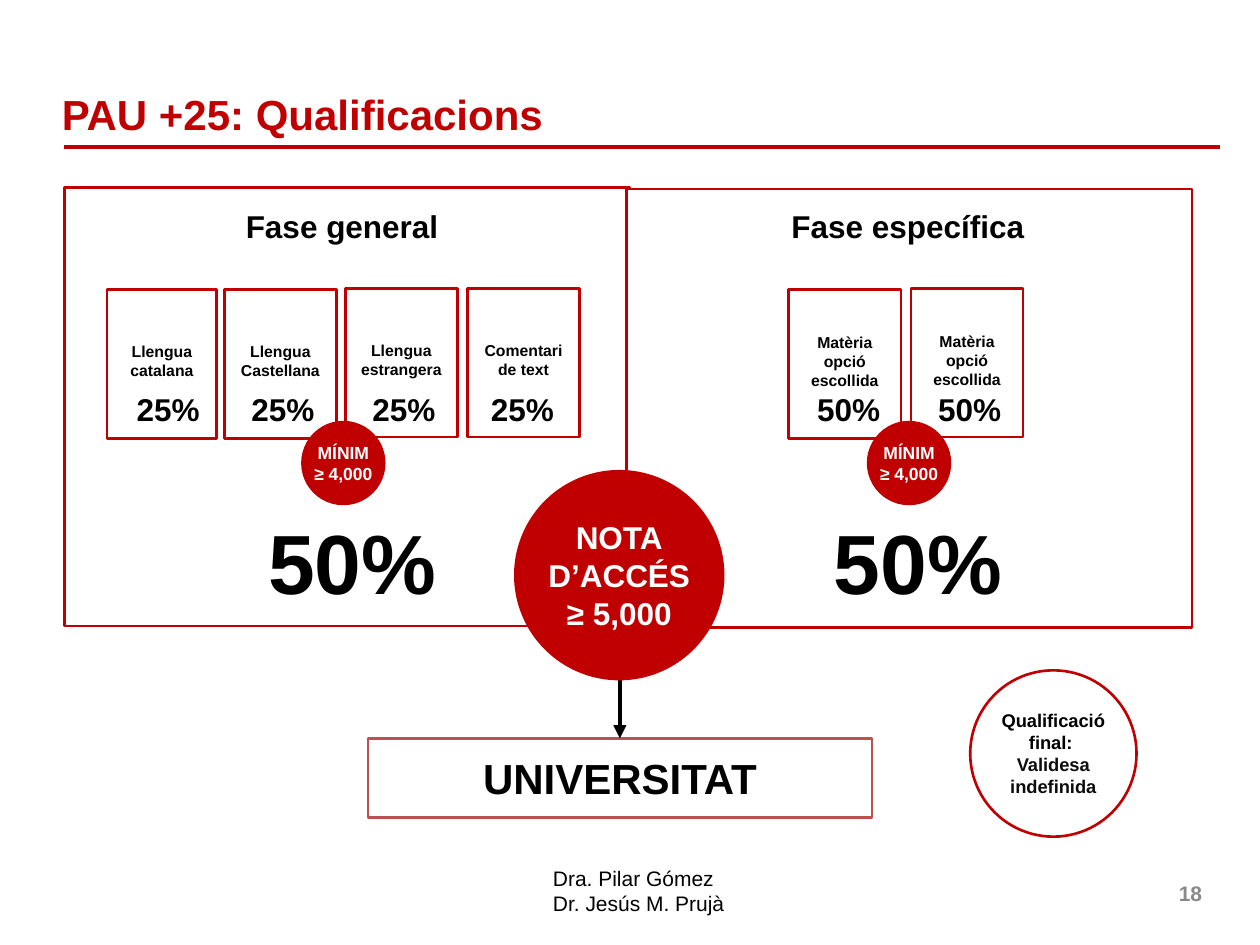
from lxml.etree import SubElement
from pptx import Presentation
from pptx.dml.color import RGBColor
from pptx.enum.shapes import MSO_CONNECTOR as Connector, MSO_SHAPE as Shape
from pptx.enum.text import MSO_ANCHOR as Anchor, PP_ALIGN as Align
from pptx.oxml.ns import qn
from pptx.util import Inches, Pt

RED, BLACK, WHITE, GREY = "C00000", "000000", "FFFFFF", "898989"
CARD_MARGINS = (0.1, 0, 0.1, 0.05)
NO_MARGINS = (0, 0, 0, 0)
TOP = 0


def color(value):
    return RGBColor.from_string(value)


def inches(values):
    return [Inches(value) for value in values]


class SlideBuilder:
    font = "Arial"

    def __init__(self, page):
        self.page = page

    def set_text(self, shape, text, size, ink=BLACK, bold=True, align=Align.CENTER,
                 anchor=Anchor.MIDDLE, margins=None, wrap=True):
        frame = shape.text_frame
        frame.text = text
        frame.word_wrap = wrap
        frame.vertical_anchor = anchor
        if margins:
            (frame.margin_left, frame.margin_top,
             frame.margin_right, frame.margin_bottom) = inches(margins)
        for paragraph in frame.paragraphs:
            paragraph.alignment = align
            for span in paragraph.runs:
                span.font.name = self.font
                span.font.size = Pt(size)
                span.font.bold = bold
                span.font.color.rgb = color(ink)

    def title(self, text, place):
        title = self.page.shapes.title
        title.left, title.top, title.width, title.height = inches(place)
        self.set_text(title, text, 24, RED, align=Align.LEFT)

    def text(self, text, place, size, anchor=Anchor.TOP, **style):
        box = self.page.shapes.add_textbox(*inches(place))
        self.set_text(box, text, size, anchor=anchor, **style)

    def shape(self, kind, place, fill=WHITE, line=RED):
        shape = self.page.shapes.add_shape(kind, *inches(place))
        shape.shadow.inherit = False
        shape.fill.solid()
        shape.fill.fore_color.rgb = color(fill)
        if line:
            shape.line.color.rgb = color(line)
            shape.line.width = Pt(1.5)
        else:
            shape.line.fill.background()
        return shape

    def circle(self, text, left, top, diameter, size, fill=RED, line=None, ink=WHITE):
        circle = self.shape(Shape.OVAL, (left, top, diameter, diameter), fill, line)
        self.set_text(circle, text, size, ink, margins=NO_MARGINS)
        return circle

    def line(self, ends, ink, width, arrow=False):
        line = self.page.shapes.add_connector(Connector.STRAIGHT, *inches(ends))
        line.line.color.rgb = color(ink)
        line.line.width = Pt(width)
        properties = line.element.spPr
        if arrow:
            SubElement(properties.find(qn("a:ln")), qn("a:tailEnd"), type="triangle")
        SubElement(properties, qn("a:effectLst"))
        return line

    def phase(self, name, panel, shift, share, cards):
        """Panel of one exam phase; cards hold (text, left, top, width, share left)."""
        self.shape(Shape.RECTANGLE, (*panel, 4.49, 3.48))
        self.text("50%", (2.02 + shift, 4, 1.55, 0.91), 48, wrap=False)
        self.text(name, (0.59 + shift, 1.59, 4.25, 0.4), 18)
        for subject, left, top, width, share_left in cards:
            card = self.shape(Shape.RECTANGLE, (left, top, width, 1.18))
            self.set_text(card, subject, 9, margins=CARD_MARGINS)
            self.text(share, (share_left, 3.05, 0.71, 0.4), 18, wrap=False)
        self.circle("MÍNIM\n≥ 4,000", 2.39 + shift, 3.34, 0.67, 10)


def main():
    deck = Presentation()
    deck.slide_width, deck.slide_height = Inches(10), Inches(7.5)
    slide = SlideBuilder(deck.slides.add_slide(deck.slide_layouts[5]))

    slide.title("PAU +25: Qualificacions", (0.39, 0.63, 9.37, 0.55))
    slide.line((0.51, 1.17, 9.68, 1.17), RED, 2.25)
    slide.text("Dra. Pilar Gómez\nDr. Jesús M. Prujà", (4.29, 6.82, 1.57, 0.51), 12,
               bold=False, align=Align.LEFT)
    slide.text("18", (7.31, 6.89, 2.33, 0.4), 12, anchor=Anchor.MIDDLE,
               ink=GREY, align=Align.RIGHT)

    slide.phase("Fase general", (0.51, 1.49), 0, "25%", [
        ("Llengua\ncatalana", 0.85, 2.3, 0.87, 0.98),
        ("Llengua\nCastellana", 1.78, 2.3, 0.89, 1.89),
        ("Llengua\nestrangera", 2.74, 2.29, 0.89, 2.85),
        ("Comentari de text", 3.71, 2.29, 0.89, 3.79),
    ])
    slide.phase("Fase específica", (4.97, 1.5), 4.49, "50%", [
        ("Matèria\vopció\nescollida", 6.26, 2.3, 0.89, 6.38),
        ("Matèria opció\nescollida", 7.23, 2.29, 0.89, 7.34),
    ])

    university = slide.shape(Shape.RECTANGLE, (2.92, 5.86, 4, 0.63), line="C0504D")
    slide.set_text(university, "UNIVERSITAT", 24)
    arrow = slide.line((4.92, 5.18, 4.92, 5.86), BLACK, 2.5, arrow=True)
    arrow.end_connect(university, TOP)
    slide.circle("NOTA\nD’ACCÉS\n≥ 5,000", 4.08, 3.73, 1.67, 18)

    final = slide.circle("Qualificació final: \nValidesa indefinida", 7.7, 5.32, 1.32,
                         10.5, WHITE, RED, BLACK)
    final.text_frame.paragraphs[1].runs[0].font.color.rgb = color("0D0D0D")

    deck.save("out.pptx")


if __name__ == "__main__":
    main()
